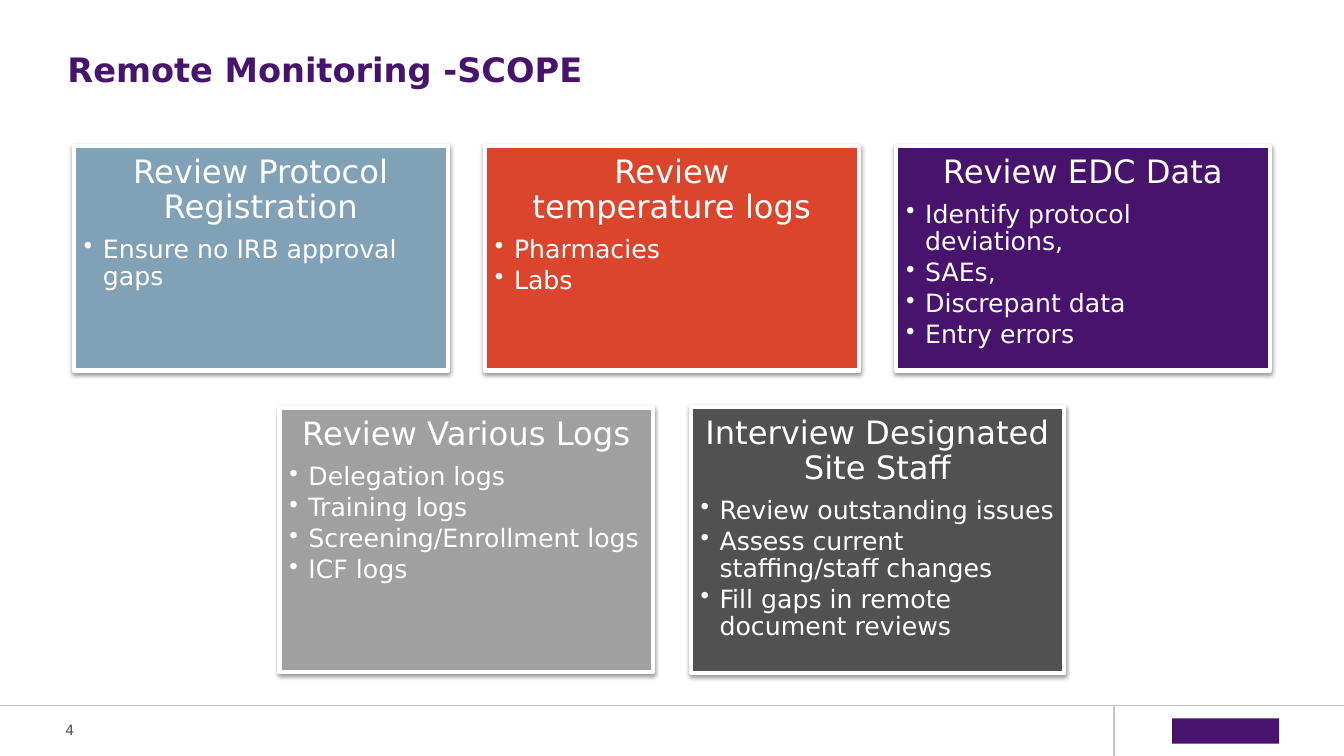
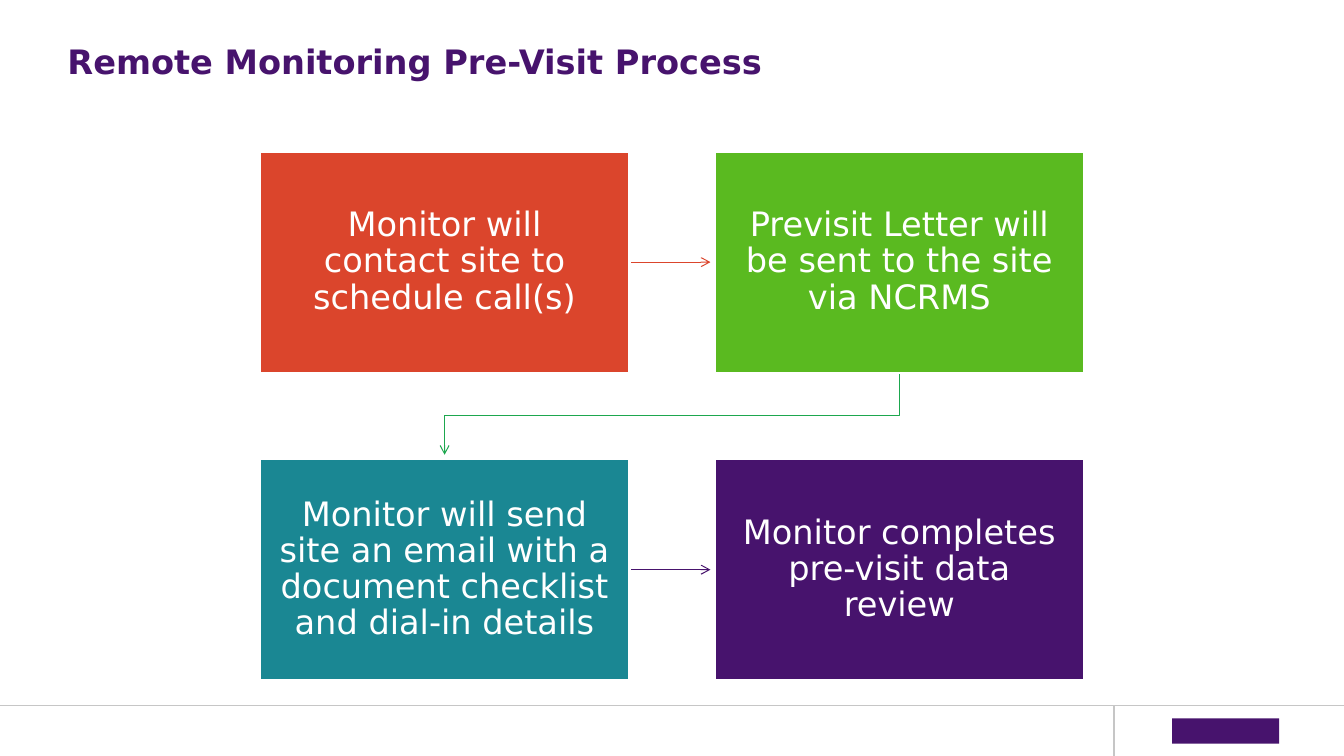
from dataclasses import dataclass

from lxml.etree import SubElement
from pptx import Presentation
from pptx.dml.color import RGBColor
from pptx.enum.shapes import MSO_CONNECTOR, MSO_SHAPE
from pptx.enum.text import MSO_ANCHOR, PP_ALIGN
from pptx.oxml import parse_xml
from pptx.oxml.ns import nsdecls, qn
from pptx.util import Cm, Pt


@dataclass(frozen=True)
class Theme:
    """Colours, type sizes and page measures in points and centimetres."""

    font: str = "DejaVu Sans"
    white: str = "FFFFFF"
    purple: str = "47136D"
    red: str = "DB452C"
    blue: str = "80A1B6"
    silver: str = "A0A0A0"
    charcoal: str = "515151"
    lime: str = "5ABA20"
    teal: str = "1A8793"
    green: str = "1DA74E"
    rule: str = "C6C6C6"
    title_size: int = 24
    heading_size: int = 23
    bullet_size: int = 18
    step_size: int = 24
    number_size: int = 10
    width: float = 33.87
    height: float = 19.05


THEME = Theme()
FOOTER_TOP = 17.78
FOOTER_SPLIT = 28.07
CARD_WIDTH, CARD_GAP = 9.42, 0.94
STEP_WIDTH, STEP_HEIGHT = 9.32, 5.59
STEP_TOP, STEP_PITCH_X, STEP_PITCH_Y = 3.81, 11.46, 7.75

CARD_ROWS = [
    (6.51, [
        (THEME.blue, 5.66, "Review Protocol Registration", ["Ensure no IRB approval gaps"]),
        (THEME.red, 5.66, "Review\ntemperature logs", ["Pharmacies", "Labs"]),
        (THEME.purple, 5.66, "Review EDC Data",
         ["Identify protocol deviations,", "SAEs,", "Discrepant data", "Entry errors"]),
    ]),
    (13.61, [
        (THEME.silver, 6.65, "Review Various Logs",
         ["Delegation logs", "Training logs", "Screening/Enrollment logs", "ICF logs"]),
        (THEME.charcoal, 6.71, "Interview Designated Site Staff",
         ["Review outstanding issues", "Assess current staffing/staff changes",
          "Fill gaps in remote document reviews"]),
    ]),
]

STEPS = [
    (THEME.red, "Monitor will\ncontact site to schedule call(s)"),
    (THEME.lime, "Previsit Letter will be sent to the site via NCRMS"),
    (THEME.teal, "Monitor will send site an email with a document checklist and dial-in details"),
    (THEME.purple, "Monitor completes pre-visit data review"),
]


def apply(target, formats):
    """Set each named attribute of the target."""
    for name, value in formats.items():
        setattr(target, name, value)


def set_frame(shape, margin, anchor):
    """Give a shape's text frame wrapping, equal margins and an anchor."""
    sides = ("margin_left", "margin_top", "margin_right", "margin_bottom")
    apply(shape.text_frame, {"word_wrap": True, "vertical_anchor": anchor,
                             **dict.fromkeys(sides, Cm(margin))})
    return shape.text_frame


def write(para, text, size, color, bold=False, **layout):
    """Write text into a paragraph with its type and layout."""
    para.text = text
    apply(para, layout)
    for span in para.runs:
        apply(span.font, {"name": THEME.font, "size": Pt(size), "bold": bold})
        span.font.color.rgb = RGBColor.from_string(color)


def add_label(page, box, text, size, color, bold=False):
    """Add a text box centred vertically without margins."""
    label = page.shapes.add_textbox(*map(Cm, box))
    frame = set_frame(label, 0, MSO_ANCHOR.MIDDLE)
    write(frame.paragraphs[0], text, size, color, bold)


def add_block(page, box, fill, border=0):
    """Add a filled rectangle with an optional white border."""
    block = page.shapes.add_shape(MSO_SHAPE.RECTANGLE, *map(Cm, box))
    block.shadow.inherit = False
    block.fill.solid()
    block.fill.fore_color.rgb = RGBColor.from_string(fill)
    if border:
        style_line(block, THEME.white, border)
    else:
        block.line.fill.background()
    return block


def style_line(shape, color, width):
    """Set the colour and width of a line."""
    shape.line.color.rgb = RGBColor.from_string(color)
    shape.line.width = Pt(width)


def add_line(page, start, end, color, width):
    """Add a straight line without a shadow."""
    line = page.shapes.add_connector(MSO_CONNECTOR.STRAIGHT, *map(Cm, (*start, *end)))
    style_line(line, color, width)
    SubElement(line._element.spPr, qn("a:effectLst"))
    return line


def add_bent_line(page, points, color, width):
    """Add an open line through several points."""
    start, *others = [tuple(map(Cm, point)) for point in points]
    builder = page.shapes.build_freeform(*start)
    builder.add_line_segments(others, close=False)
    line = builder.convert_to_shape()
    line.shadow.inherit = False
    line.fill.background()
    style_line(line, color, width)
    return line


def add_arrowhead(line):
    """Put an open arrowhead at the end of a line."""
    SubElement(line.line._get_or_add_ln(), qn("a:tailEnd"), type="arrow")


def add_card_shadow(card):
    """Give a card a soft shadow below it."""
    effects = card._element.spPr.find(qn("a:effectLst"))
    effects.append(parse_xml(
        f'<a:outerShdw {nsdecls("a")} blurRad="{Pt(3.1)}" dist="{Pt(1.6)}" '
        'dir="5400000" rotWithShape="0"><a:srgbClr val="000000">'
        '<a:alpha val="38000"/></a:srgbClr></a:outerShdw>'))


def add_bullet(para):
    """Give a paragraph a bullet and a hanging indent."""
    properties = para._p.get_or_add_pPr()
    apply_indent = {"marL": Cm(0.48), "indent": -Cm(0.48)}
    for name, value in apply_indent.items():
        properties.set(name, str(int(value)))
    SubElement(properties, qn("a:buChar"), char="•")


def add_card(page, box, fill, heading, bullets):
    """Add a card with a centred heading and a bullet list."""
    card = add_block(page, box, fill, 3)
    add_card_shadow(card)
    frame = set_frame(card, 0.25, MSO_ANCHOR.TOP)
    write(frame.paragraphs[0], heading, THEME.heading_size, THEME.white,
          alignment=PP_ALIGN.CENTER, line_spacing=0.9, space_after=Pt(8))
    for bullet in bullets:
        para = frame.add_paragraph()
        add_bullet(para)
        write(para, bullet, THEME.bullet_size, THEME.white,
              alignment=PP_ALIGN.LEFT, line_spacing=0.9, space_after=Pt(2.7))


def add_step(page, box, fill, text):
    """Add one process step."""
    frame = set_frame(add_block(page, box, fill, 2), 0.48, MSO_ANCHOR.MIDDLE)
    write(frame.paragraphs[0], text, THEME.step_size, THEME.white,
          alignment=PP_ALIGN.CENTER, line_spacing=0.9)


def add_page(deck, title, title_top):
    """Add a page with its title and footer."""
    page = deck.slides.add_slide(deck.slide_layouts[6])
    add_line(page, (0, FOOTER_TOP), (THEME.width, FOOTER_TOP), THEME.rule, 1)
    add_line(page, (FOOTER_SPLIT, FOOTER_TOP), (FOOTER_SPLIT, THEME.height), THEME.rule, 1)
    add_block(page, (29.54, 18.1, 2.7, 0.64), THEME.purple)
    add_label(page, (1.7, title_top, 30.48, 2.18), title,
              THEME.title_size, THEME.purple, bold=True)
    return page


def add_scope_page(deck):
    """Build the page of scope cards in centred rows."""
    page = add_page(deck, "Remote Monitoring -SCOPE", 0.64)
    add_label(page, (1.65, 18.08, 1.45, 0.64), "4", THEME.number_size, THEME.charcoal)
    pitch = CARD_WIDTH + CARD_GAP
    for middle, cards in CARD_ROWS:
        left = (THEME.width - len(cards) * pitch + CARD_GAP) / 2
        for index, (fill, height, heading, bullets) in enumerate(cards):
            box = (left + index * pitch, middle - height / 2, CARD_WIDTH, height)
            add_card(page, box, fill, heading, bullets)


def add_process_page(deck):
    """Build the page of process steps joined by arrows."""
    page = add_page(deck, "Remote Monitoring Pre-Visit Process", 0.46)
    left = (THEME.width - STEP_WIDTH - STEP_PITCH_X) / 2
    right = left + STEP_PITCH_X
    clearance = 0.1
    for row, color in enumerate((THEME.red, THEME.purple)):
        middle = STEP_TOP + row * STEP_PITCH_Y + STEP_HEIGHT / 2
        add_arrowhead(add_line(page, (left + STEP_WIDTH, middle),
                               (right - clearance, middle), color, 0.75))
    start_x, end_x = right + STEP_WIDTH / 2, left + STEP_WIDTH / 2
    start_y, end_y = STEP_TOP + STEP_HEIGHT, STEP_TOP + STEP_PITCH_Y - clearance
    bend_y = STEP_TOP + (STEP_HEIGHT + STEP_PITCH_Y) / 2
    add_arrowhead(add_bent_line(
        page, [(start_x, start_y), (start_x, bend_y), (end_x, bend_y), (end_x, end_y)],
        THEME.green, 0.75))
    for index, (fill, text) in enumerate(STEPS):
        row, column = divmod(index, 2)
        box = (left + column * STEP_PITCH_X, STEP_TOP + row * STEP_PITCH_Y,
               STEP_WIDTH, STEP_HEIGHT)
        add_step(page, box, fill, text)


def main():
    """Build and save the deck."""
    deck = Presentation()
    apply(deck, {"slide_width": Cm(THEME.width), "slide_height": Cm(THEME.height)})
    add_scope_page(deck)
    add_process_page(deck)
    deck.save("out.pptx")


if __name__ == "__main__":
    main()
